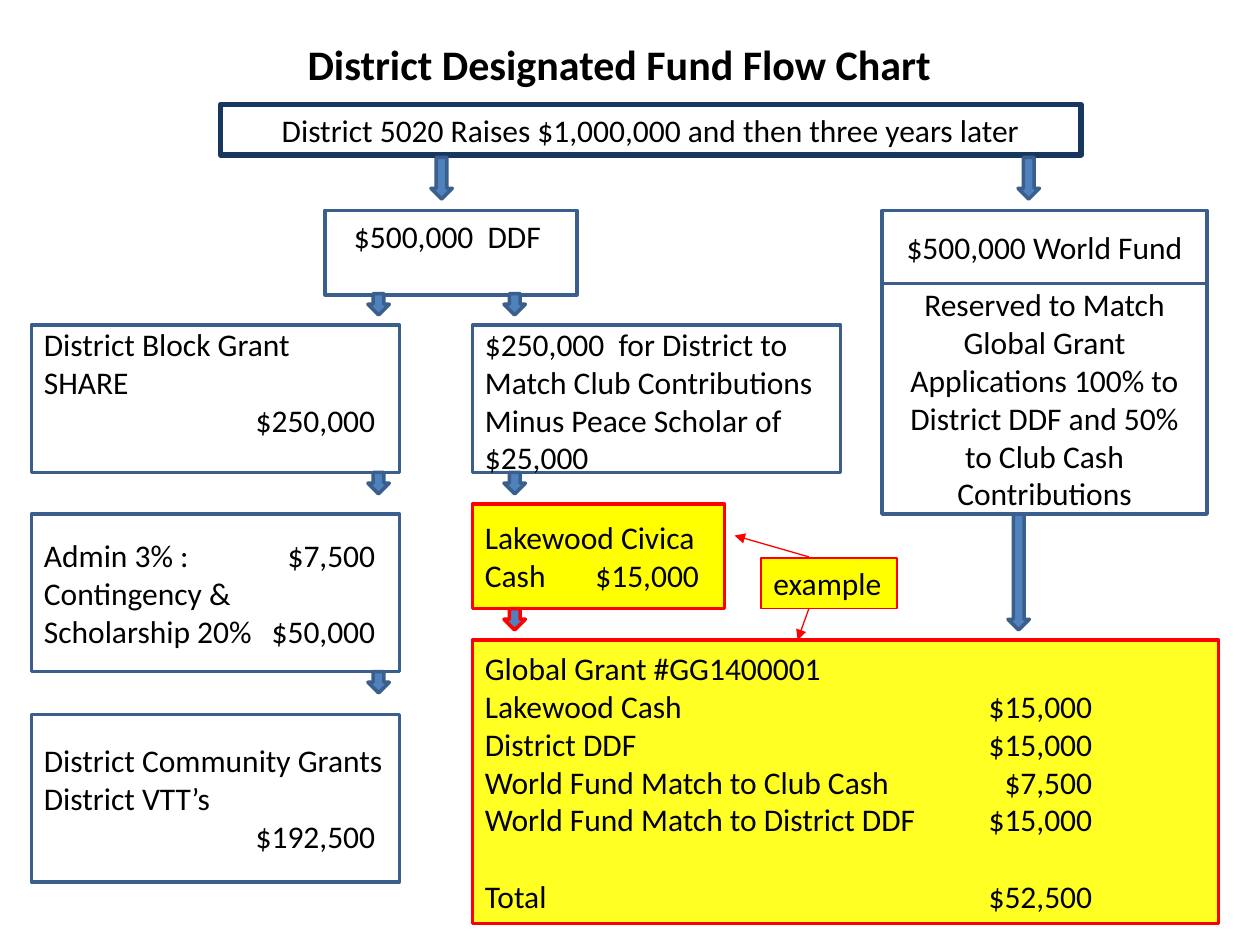
from lxml.etree import SubElement
from pptx import Presentation
from pptx.dml.color import RGBColor
from pptx.enum.shapes import MSO_CONNECTOR, MSO_SHAPE
from pptx.enum.text import MSO_ANCHOR, PP_ALIGN
from pptx.oxml.ns import qn
from pptx.util import Inches, Pt

COLORS = {"black": "000000", "white": "FFFFFF", "navy": "17375E", "edge": "3A5F8C",
          "blue": "4F81BD", "yellow": "FFFF00", "red": "FF0000"}
PLAIN = {"fill": "white", "line": "edge", "width": 2}
CASH = {"fill": "yellow", "line": "red", "width": 2}
CENTER, TOP = PP_ALIGN.CENTER, MSO_ANCHOR.TOP
LINE_HEIGHT = 22  # points taken by one 18 pt line

# (left, top, width, height), lines, options; tab is a right-aligned stop for amounts
BOXES = [
    ((1.75, 0.17, 6.33, 0.67), ["District Designated Fund Flow Chart"],
     {"align": CENTER, "size": 24, "bold": True}),
    ((1.75, 0.83, 6.83, 0.4), ["District 5020 Raises $1,000,000 and then three years later"],
     {"line": "navy", "width": 3, "align": CENTER}),
    ((2.58, 1.67, 2, 0.67), ["$500,000  DDF"], {**PLAIN, "anchor": TOP, "inset": 0.23}),
    ((7, 1.67, 2.58, 0.58), ["$500,000 World Fund"], {**PLAIN, "align": CENTER}),
    ((0.25, 2.58, 2.92, 1.17), ["District Block Grant", "SHARE", "\t$250,000"],
     {**PLAIN, "anchor": TOP, "top": 0, "tab": 2.63}),
    ((3.75, 2.58, 2.92, 1.17),
     ["$250,000  for District to", "Match Club Contributions", "Minus Peace Scholar of", "$25,000"],
     {**PLAIN, "anchor": TOP, "top": 0}),
    ((7, 2.25, 2.58, 1.83),
     ["Reserved to Match Global Grant Applications 100% to District DDF "
      "and 50% to Club Cash Contributions"], {**PLAIN, "align": CENTER}),
    ((0.25, 4.08, 2.92, 1.25),
     ["Admin 3% :\t$7,500", "Contingency &", "Scholarship 20%\t$50,000"],
     {**PLAIN, "tab": 2.63}),
    ((0.25, 5.67, 2.92, 1.33),
     ["District Community Grants", "District VTT’s", "\t$192,500"], {**PLAIN, "tab": 2.63}),
    ((3.75, 4, 2, 0.83), ["Lakewood Civica", "Cash\t$15,000"], {**CASH, "tab": 1.7}),
    ((3.75, 5.08, 5.92, 2.25),
     ["Global Grant #GG1400001", "Lakewood Cash\t$15,000", "District DDF\t$15,000",
      "World Fund Match to Club Cash\t$7,500", "World Fund Match to District DDF\t$15,000",
      "Total\t$52,500"],
     {**CASH, "alpha": 86, "tab": 4.82, "last_gap": LINE_HEIGHT}),
    ((6.04, 4.43, 1.08, 0.4), ["example"], {**CASH, "width": 0.75}),
]

# left, top, height, line colour
ARROW_WIDTH = 0.17
ARROWS = [
    (3.42, 1.25, 0.33, "edge"), (8.08, 1.25, 0.33, "edge"),
    (2.92, 2.33, 0.17, "edge"), (4, 2.33, 0.17, "edge"),
    (2.92, 3.75, 0.17, "edge"), (4, 3.75, 0.17, "edge"),
    (2.92, 5.33, 0.17, "edge"), (8, 4.08, 0.92, "edge"),
    (4, 4.83, 0.17, "red"),
]

# from, to
POINTERS = [((6.42, 4.42), (5.83, 4.25)), ((6.42, 4.83), (6.33, 5.08))]


def rgb(name):
    return RGBColor.from_string(COLORS[name])


def add_outlined(slide, preset, place, fill=None, line=None, width=2):
    shape = slide.shapes.add_shape(preset, *map(Inches, place))
    shape.shadow.inherit = False
    if fill:
        shape.fill.solid()
        shape.fill.fore_color.rgb = rgb(fill)
    else:
        shape.fill.background()
    if line:
        shape.line.color.rgb = rgb(line)
        shape.line.width = Pt(width)
    else:
        shape.line.fill.background()
    return shape


def set_alpha(shape, percent):
    color = shape.fill._xPr.find(qn("a:solidFill"))[0]
    SubElement(color, qn("a:alpha")).set("val", str(percent * 1000))


def add_tab_stop(paragraph, position):
    stops = SubElement(paragraph._p.get_or_add_pPr(), qn("a:tabLst"))
    stop = SubElement(stops, qn("a:tab"))
    stop.set("pos", str(Inches(position)))
    stop.set("algn", "r")


def write_lines(frame, lines, align=PP_ALIGN.LEFT, anchor=MSO_ANCHOR.MIDDLE, size=18,
                bold=False, inset=0.1, top=0.05, tab=None, last_gap=0):
    frame.word_wrap = True
    frame.vertical_anchor = anchor
    frame.margin_left, frame.margin_top = Inches(inset), Inches(top)
    for i, text in enumerate(lines):
        paragraph = frame.paragraphs[0] if i == 0 else frame.add_paragraph()
        paragraph.alignment = align
        if last_gap and i == len(lines) - 1:
            paragraph.space_before = Pt(last_gap)
        if tab and "\t" in text:
            add_tab_stop(paragraph, tab)
        run = paragraph.add_run()
        run.text = text
        run.font.name, run.font.size, run.font.bold = "Calibri", Pt(size), bold
        run.font.color.rgb = rgb("black")


def add_pointer(slide, start, end):
    pointer = slide.shapes.add_connector(MSO_CONNECTOR.STRAIGHT, *map(Inches, start + end))
    pointer.line.color.rgb = rgb("red")
    pointer.line.width = Pt(0.75)
    SubElement(pointer.line._get_or_add_ln(), qn("a:tailEnd")).set("type", "triangle")
    SubElement(pointer._element.spPr, qn("a:effectLst"))


def main():
    prs = Presentation()
    prs.slide_width, prs.slide_height = Inches(10), Inches(7.5)
    slide = prs.slides.add_slide(prs.slide_layouts[6])

    # Title and fund boxes
    for place, lines, options in BOXES:
        text_options = dict(options)
        style = {key: text_options.pop(key) for key in ("fill", "line", "width")
                 if key in text_options}
        alpha = text_options.pop("alpha", None)
        box = add_outlined(slide, MSO_SHAPE.RECTANGLE, place, **style)
        if alpha:
            set_alpha(box, alpha)
        write_lines(box.text_frame, lines, **text_options)

    # Flow arrows
    for left, top, height, line in ARROWS:
        add_outlined(slide, MSO_SHAPE.DOWN_ARROW, (left, top, ARROW_WIDTH, height), "blue", line)

    # Pointers from the example label
    for start, end in POINTERS:
        add_pointer(slide, start, end)

    prs.save("out.pptx")


if __name__ == "__main__":
    main()
